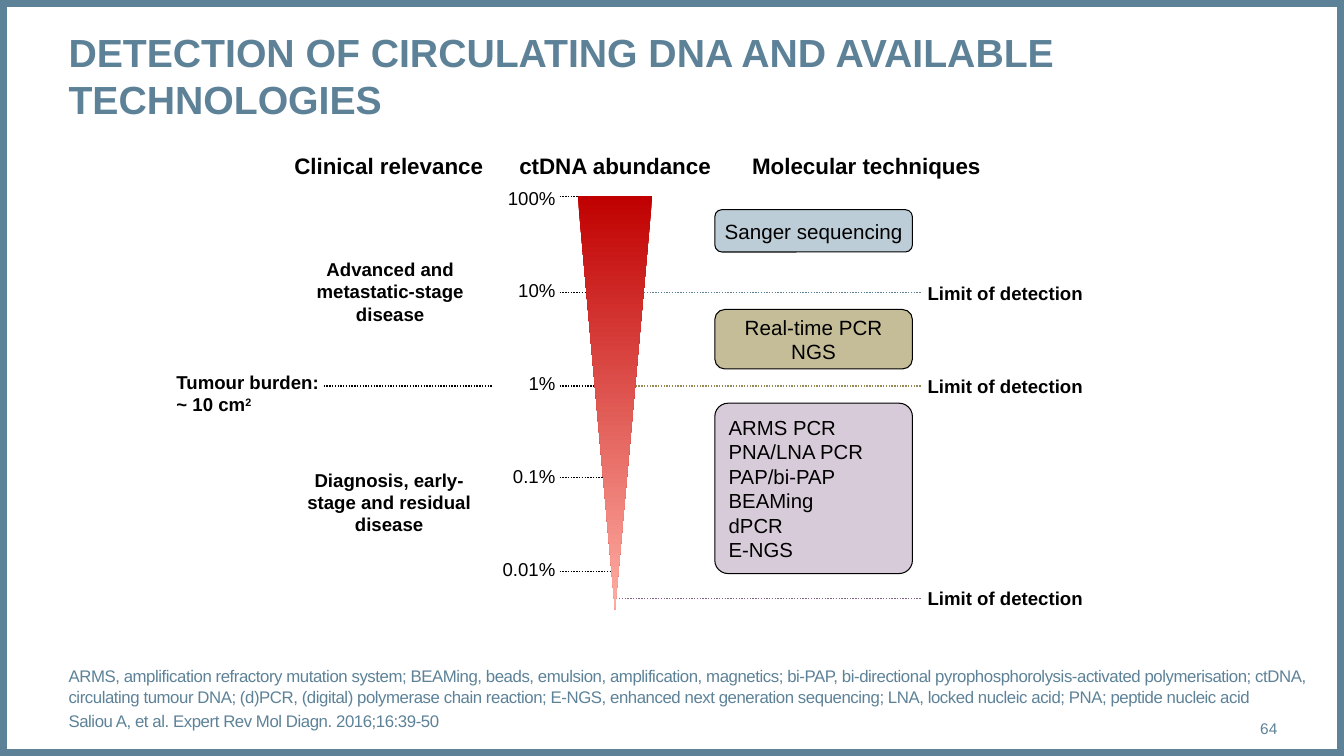
from copy import deepcopy
from dataclasses import dataclass

import pptx
import pptx.dml.color
import pptx.enum.dml
import pptx.enum.shapes
import pptx.enum.text
import pptx.oxml.ns
import pptx.util

Inches = pptx.util.Inches
SHAPES = pptx.enum.shapes.MSO_SHAPE
ALIGN = pptx.enum.text.PP_ALIGN
ANCHOR = pptx.enum.text.MSO_ANCHOR
AUTO_SIZE = pptx.enum.text.MSO_AUTO_SIZE

COLOURS = {
    "slate": "5D8298", "black": "000000", "sanger": "BDCDD7", "real_time": "C4BD97",
    "sensitive": "D7CBD9", "olive": "948A54", "plum": "826288",
    "wedge_top": "C00000", "wedge_tip": "FFAFA5",
}
Box = tuple[float, float, float, float]


@dataclass
class Label:
    """Text box; '\\v' breaks a line and '^' raises the rest of the paragraph."""
    paragraphs: list[str]
    box: Box
    size: float = 13.3
    bold: bool = True
    align: ALIGN = ALIGN.LEFT
    colour: str = "black"


@dataclass
class Technique:
    paragraphs: list[str]
    top: float
    height: float
    fill: str
    corner: float = 0.167
    size: float = 14.7
    align: ALIGN = ALIGN.CENTER
    left_inset: float = 0


@dataclass
class DottedLine:
    start: float
    end: float
    y: float
    colour: str = "black"


def rgb(name: str) -> pptx.dml.color.RGBColor:
    return pptx.dml.color.RGBColor.from_string(COLOURS[name])


def apply_format(target, values: dict) -> None:
    for name, value in values.items():
        setattr(target, name, value)


def write_text(frame, paragraphs: list[str], size: float, colour: str, bold: bool = False,
               align: ALIGN = ALIGN.LEFT, space_before: float = 0, spacing: int = 0,
               **frame_format) -> None:
    apply_format(frame, {"margin_left": 0, "margin_top": 0, "margin_right": 0,
                         "margin_bottom": 0, "word_wrap": True,
                         "auto_size": AUTO_SIZE.NONE, **frame_format})
    for index, text in enumerate(paragraphs):
        paragraph = frame.paragraphs[0] if index == 0 else frame.add_paragraph()
        base, _, raised = text.partition("^")
        paragraph.text = base
        if raised:
            paragraph.add_run().text = raised
        apply_format(paragraph, {"alignment": align, "line_spacing": 1.0,
                                 "space_before": pptx.util.Pt(space_before),
                                 "space_after": pptx.util.Pt(0)})
        for run in paragraph.runs:
            apply_format(run.font, {"name": "Arial", "size": pptx.util.Pt(size), "bold": bold})
            run.font.color.rgb = rgb(colour)
            if spacing:
                run._r.get_or_add_rPr().set("spc", str(spacing))
        if raised:
            paragraph.runs[-1]._r.get_or_add_rPr().set("baseline", "30000")
        # Line breaks take the run's size, so line heights stay even
        for line_break in paragraph._p.findall(pptx.oxml.ns.qn("a:br")):
            line_break.insert(0, deepcopy(paragraph.runs[0]._r.rPr))


def place(shape, box: Box) -> None:
    apply_format(shape, dict(zip(("left", "top", "width", "height"), map(Inches, box))))


def add_preset(slide, preset: SHAPES, box: Box):
    shape = slide.shapes.add_shape(preset, *map(Inches, box))
    shape.shadow.inherit = False
    return shape


def add_label(slide, label: Label, **frame_format) -> None:
    frame = slide.shapes.add_textbox(*map(Inches, label.box)).text_frame
    settings = {"word_wrap": False, "auto_size": AUTO_SIZE.SHAPE_TO_FIT_TEXT, **frame_format}
    write_text(frame, label.paragraphs, label.size, label.colour, label.bold,
               label.align, **settings)


def add_technique(slide, technique: Technique) -> None:
    card = add_preset(slide, SHAPES.ROUNDED_RECTANGLE,
                      (7.09, technique.top, 1.96, technique.height))
    card.adjustments[0] = technique.corner
    card.fill.solid()
    card.fill.fore_color.rgb = rgb(technique.fill)
    card.line.color.rgb = rgb("black")
    card.line.width = pptx.util.Pt(0.75)
    write_text(card.text_frame, technique.paragraphs, technique.size, "black",
               align=technique.align, vertical_anchor=ANCHOR.MIDDLE,
               margin_left=Inches(technique.left_inset))


def add_dotted_line(slide, dotted: DottedLine) -> None:
    connector = slide.shapes.add_connector(
        pptx.enum.shapes.MSO_CONNECTOR.STRAIGHT, Inches(dotted.start), Inches(dotted.y),
        Inches(dotted.end), Inches(dotted.y))
    connector.line.color.rgb = rgb(dotted.colour)
    apply_format(connector.line, {"width": pptx.util.Pt(1),
                                  "dash_style": pptx.enum.dml.MSO_LINE.ROUND_DOT})
    properties = connector._element.spPr
    properties.append(properties.makeelement(pptx.oxml.ns.qn("a:effectLst"), {}))


TECHNIQUES = [
    Technique(["Sanger sequencing"], 2.08, 0.42, "sanger"),
    Technique(["Real-time PCR\vNGS"], 3.07, 0.59, "real_time"),
    Technique(["ARMS PCR", "PNA/LNA PCR", "PAP/bi-PAP", "BEAMing", "dPCR", "E-NGS"],
              4, 1.69, "sensitive", 0.078, 14.5, ALIGN.LEFT, 0.1),
]
HEADINGS = [
    Label(["Clinical relevance"], (2.92, 1.51, 1.9, 0.27), 16),
    Label(["ctDNA abundance"], (5.14, 1.51, 1.92, 0.27), 16, align=ALIGN.CENTER),
    Label(["Molecular techniques"], (7.46, 1.51, 2.29, 0.27), 16),
]
CLINICAL_STAGES = [
    Label(["Advanced and\vmetastatic-stage\vdisease"], (3.13, 2.56, 1.48, 0.67),
          align=ALIGN.CENTER),
    Label(["Tumour burden:", "~ 10 cm^2"], (1.75, 3.68, 1.43, 0.45)),
    Label(["Diagnosis, early-\vstage and residual\vdisease"], (3.04, 4.65, 1.64, 0.67),
          align=ALIGN.CENTER),
]
# Abundance, label width, tick height
ABUNDANCES = [("100%", 0.48, 1.95), ("10%", 0.37, 2.9), ("1%", 0.27, 3.83),
              ("0.1%", 0.43, 4.74), ("0.01%", 0.53, 5.67)]
# Line height, label top, line colour
DETECTION_LIMITS = [(2.9, 2.8, "slate"), (3.83, 3.72, "olive"), (5.94, 5.82, "plum")]
FOOTNOTES = [
    "ARMS, amplification refractory mutation system; BEAMing, beads, emulsion, amplification, "
    "magnetics; bi‑PAP, bi‑directional pyrophosphorolysis-activated polymerisation; "
    "ctDNA, circulating tumour DNA; (d)PCR, (digital) polymerase chain reaction; E-NGS, "
    "enhanced next generation sequencing; LNA, locked nucleic acid; PNA; peptide nucleic acid",
    "Saliou A, et al. Expert Rev Mol Diagn. 2016;16:39-50",
]


def main() -> None:
    deck = pptx.Presentation()
    deck.slide_width, deck.slide_height = Inches(13.33), Inches(7.5)
    slide = deck.slides.add_slide(deck.slide_layouts.get_by_name("Section Header"))

    # Frame, title, footnotes and page number
    frame = add_preset(slide, SHAPES.RECTANGLE, (0, 0, 13.33, 7.5))
    frame.fill.background()
    frame.line.color.rgb = rgb("slate")
    frame.line.width = pptx.util.Pt(10)
    title, footnotes = slide.shapes.title, slide.placeholders[1]
    place(title, (0.68, 0.28, 11.99, 0.94))
    write_text(title.text_frame, ["DETECTION OF CIRCULATING DNA AND AVAILABLE TECHNOLOGIES"],
               28, "slate", bold=True, vertical_anchor=ANCHOR.TOP)
    place(footnotes, (0.68, 6.85, 12.66, 0.4))
    write_text(footnotes.text_frame, FOOTNOTES, 12, "slate", space_before=3, spacing=-30,
               vertical_anchor=ANCHOR.BOTTOM)
    add_label(slide, Label(["64"], (11.81, 7.03, 0.86, 0.4), 11, False, ALIGN.RIGHT, "slate"),
              word_wrap=True, auto_size=AUTO_SIZE.NONE, vertical_anchor=ANCHOR.MIDDLE)

    # Headings, clinical stages and techniques
    for label in HEADINGS + CLINICAL_STAGES:
        add_label(slide, label)
    for technique in TECHNIQUES:
        add_technique(slide, technique)

    # Abundance scale and detection limits
    add_dotted_line(slide, DottedLine(3.21, 4.88, 3.83))
    for step, (abundance, width, tick_y) in enumerate(ABUNDANCES):
        add_label(slide, Label([abundance], (5.51 - width, 1.85 + 0.92 * step, width, 0.22),
                               bold=False, align=ALIGN.RIGHT))
        add_dotted_line(slide, DottedLine(5.55, 6.14, tick_y))
    for line_y, label_top, colour in DETECTION_LIMITS:
        add_dotted_line(slide, DottedLine(6.14, 9.13, line_y, colour))
        add_label(slide, Label(["Limit of detection"], (9.2, label_top, 1.56, 0.22)))

    # Wedge narrowing towards low abundance
    wedge = add_preset(slide, SHAPES.FLOWCHART_MERGE, (5.73, 1.94, 0.74, 4.11))
    wedge.line.fill.background()
    wedge.fill.gradient()
    wedge.fill.gradient_angle = 270
    for stop, colour in zip(wedge.fill.gradient_stops, ("wedge_top", "wedge_tip")):
        stop.color.rgb = rgb(colour)

    deck.save("out.pptx")


if __name__ == "__main__":
    main()
